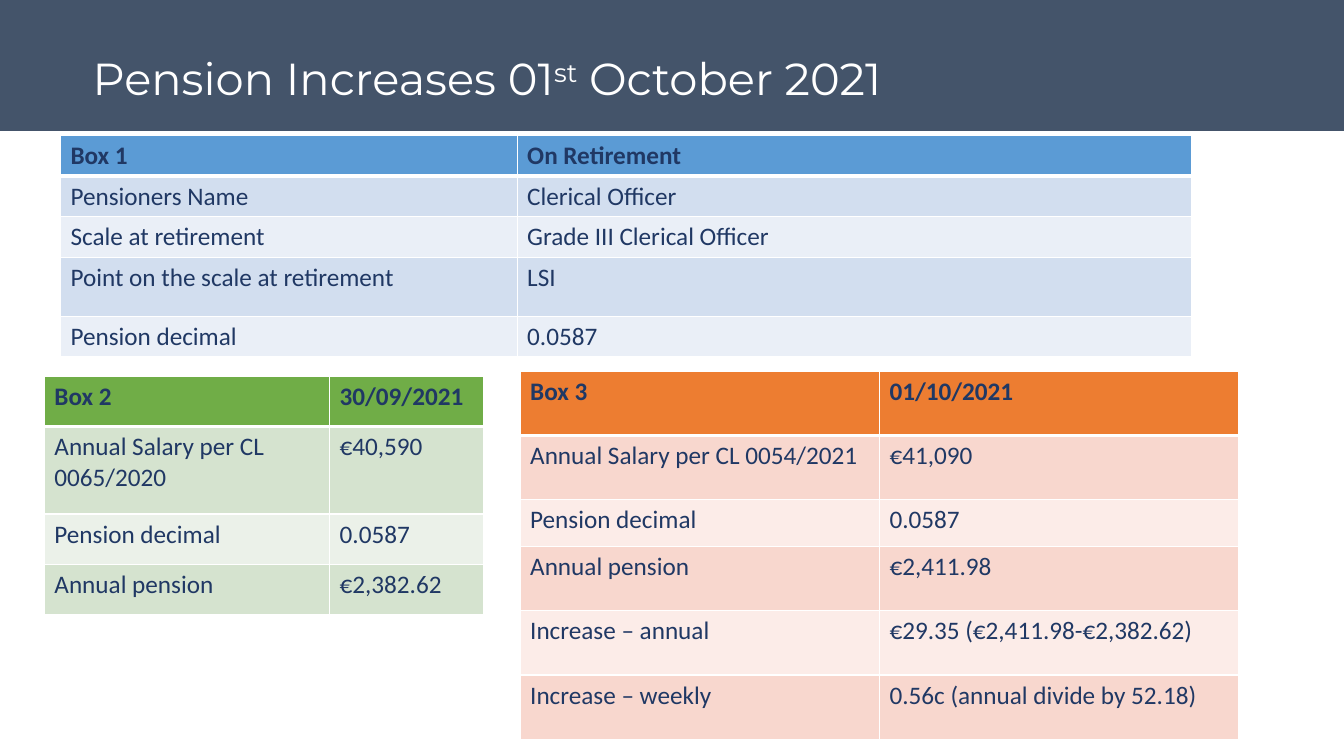
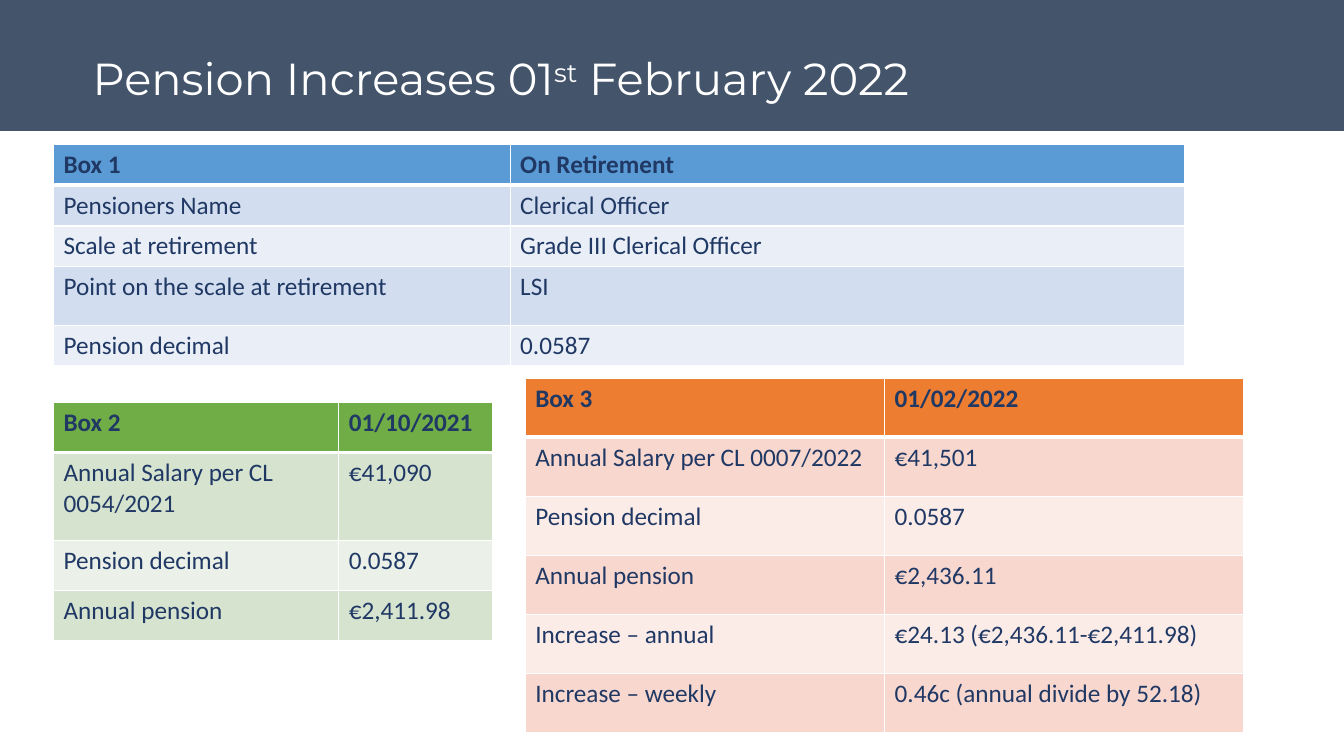
from lxml.etree import SubElement
from pptx import Presentation
from pptx.dml.color import RGBColor
from pptx.enum.shapes import MSO_SHAPE
from pptx.enum.text import MSO_ANCHOR, PP_ALIGN
from pptx.oxml.ns import qn
from pptx.util import Inches, Pt

SLIDE_WIDTH, SLIDE_HEIGHT = Inches(13.333), Inches(7.5)
TITLE_ONLY = 5

COLOURS = {"band": "44546A", "title": "FFFFFF", "text": "203864", "border": "FFFFFF"}
# Header, odd rows, even rows
PALETTES = {
    "blue": ("5B9BD5", "D2DEEF", "EAEFF7"),
    "green": ("70AD47", "D5E3CF", "EBF1E9"),
    "orange": ("ED7D31", "F8D7CE", "FCECE8"),
}
TITLE_FONT, TABLE_FONT = "Montserrat", "Calibri"
THIN, THICK = Pt(1), Pt(3)

# Column widths and row heights, in percent of the slide
RETIREMENT_COLUMNS, RETIREMENT_ROWS = (33.98, 50.18), (5.33, 5.33, 5.33, 7.73, 5.33)
BEFORE_COLUMNS, BEFORE_ROWS = (21.22, 11.48), (6.67, 11.6, 6.67, 6.67)
AFTER_COLUMNS = (26.74, 26.74)

PENSION_DECIMAL = ("Pension decimal", "0.0587")
RETIREMENT = [
    ("Box 1", "On Retirement"),
    ("Pensioners Name", "Clerical Officer"),
    ("Scale at retirement", "Grade III Clerical Officer"),
    ("Point on the scale at retirement", "LSI"),
    PENSION_DECIMAL,
]

# Each position is (left, top) in percent of the slide
# Each state is date, circular, salary, pension
INCREASES = [
    {
        "date": "October 2021",
        "before": ("30/09/2021", "0065/2020", "€40,590", "€2,382.62"),
        "after": ("01/10/2021", "0054/2021", "€41,090", "€2,411.98"),
        "annual": "€29.35",
        "weekly": "0.56c",
        "positions": ((4.5, 17.87), (3.3, 49.73), (38.7, 49.07)),
        "after_rows": (8.53, 8.53, 6.13, 8.53, 8.53, 8.53),
    },
    {
        "date": "February 2022",
        "before": ("01/10/2021", "0054/2021", "€41,090", "€2,411.98"),
        "after": ("01/02/2022", "0007/2022", "€41,501", "€2,436.11"),
        "annual": "€24.13",
        "weekly": "0.46c",
        "positions": ((3.98, 19.07), (3.98, 53.2), (39.08, 50)),
        "after_rows": (7.82,) * 6,
    },
]


def across(percent):
    return round(SLIDE_WIDTH * percent / 100)


def down(percent):
    return round(SLIDE_HEIGHT * percent / 100)


def colour(name):
    return RGBColor.from_string(COLOURS[name])


def add_band(slide):
    band = slide.shapes.add_shape(
        MSO_SHAPE.RECTANGLE, 0, down(-0.8), SLIDE_WIDTH, down(18.13)
    )
    band.shadow.inherit = False
    band.fill.solid()
    band.fill.fore_color.rgb = colour("band")
    band.line.fill.background()
    # Send the band behind the title
    slide.shapes.title._element.addprevious(band._element)


def set_title(slide, date):
    title = slide.shapes.title
    title.left, title.top = across(6.15), down(6)
    title.width, title.height = across(87.83), down(8.53)
    title.text_frame.vertical_anchor = MSO_ANCHOR.MIDDLE
    paragraph = title.text_frame.paragraphs[0]
    paragraph.alignment = PP_ALIGN.LEFT
    for text, baseline in (("Pension Increases 01", 0), ("st", 30000), (f" {date}", 0)):
        run = paragraph.add_run()
        run.text = text
        run.font.name, run.font.size = TITLE_FONT, Pt(32)
        run.font.color.rgb = colour("title")
        if baseline:
            run.font._element.set("baseline", str(baseline))


def set_borders(cell, top, bottom):
    properties = cell._tc.get_or_add_tcPr()
    for side, width in (("L", THIN), ("R", THIN), ("T", top), ("B", bottom)):
        line = SubElement(properties, qn(f"a:ln{side}"), w=str(width))
        fill = SubElement(line, qn("a:solidFill"))
        SubElement(fill, qn("a:srgbClr"), val=COLOURS["border"])


def format_cell(cell, text, row, palette):
    header, odd, even = PALETTES[palette]
    # The thick rule lies between the header and the first body row
    set_borders(cell, THICK if row == 1 else THIN, THICK if row == 0 else THIN)
    cell.fill.solid()
    fill = header if row == 0 else odd if row % 2 else even
    cell.fill.fore_color.rgb = RGBColor.from_string(fill)
    cell.text_frame.text = text
    font = cell.text_frame.paragraphs[0].runs[0].font
    font.name, font.size, font.bold = TABLE_FONT, Pt(18), row == 0
    font.color.rgb = colour("text")


def add_box(slide, position, widths, heights, rows, palette):
    left, top = position
    table = slide.shapes.add_table(
        len(rows), len(widths), across(left), down(top),
        across(sum(widths)), down(sum(heights)),
    ).table
    table.first_row = table.horz_banding = False
    for column, width in zip(table.columns, widths):
        column.width = across(width)
    for row_index, (height, texts) in enumerate(zip(heights, rows)):
        table.rows[row_index].height = down(height)
        for column_index, text in enumerate(texts):
            format_cell(table.cell(row_index, column_index), text, row_index, palette)


def pension_rows(name, state):
    date, circular, salary, pension = state
    return [
        (name, date),
        (f"Annual Salary per CL {circular}", salary),
        PENSION_DECIMAL,
        ("Annual pension", pension),
    ]


def increase_rows(increase):
    old, new = increase["before"][-1], increase["after"][-1]
    return [
        ("Increase – annual", f"{increase['annual']} ({new}-{old})"),
        ("Increase – weekly", f"{increase['weekly']} (annual divide by 52.18)"),
    ]


def add_increase_slide(presentation, increase):
    slide = presentation.slides.add_slide(presentation.slide_layouts[TITLE_ONLY])
    add_band(slide)
    set_title(slide, increase["date"])
    retirement_at, before_at, after_at = increase["positions"]
    before = pension_rows("Box 2", increase["before"])
    after = pension_rows("Box 3", increase["after"]) + increase_rows(increase)
    add_box(slide, retirement_at, RETIREMENT_COLUMNS, RETIREMENT_ROWS, RETIREMENT, "blue")
    add_box(slide, before_at, BEFORE_COLUMNS, BEFORE_ROWS, before, "green")
    add_box(slide, after_at, AFTER_COLUMNS, increase["after_rows"], after, "orange")


def main():
    presentation = Presentation()
    presentation.slide_width, presentation.slide_height = SLIDE_WIDTH, SLIDE_HEIGHT
    for increase in INCREASES:
        add_increase_slide(presentation, increase)
    presentation.save("out.pptx")


if __name__ == "__main__":
    main()
